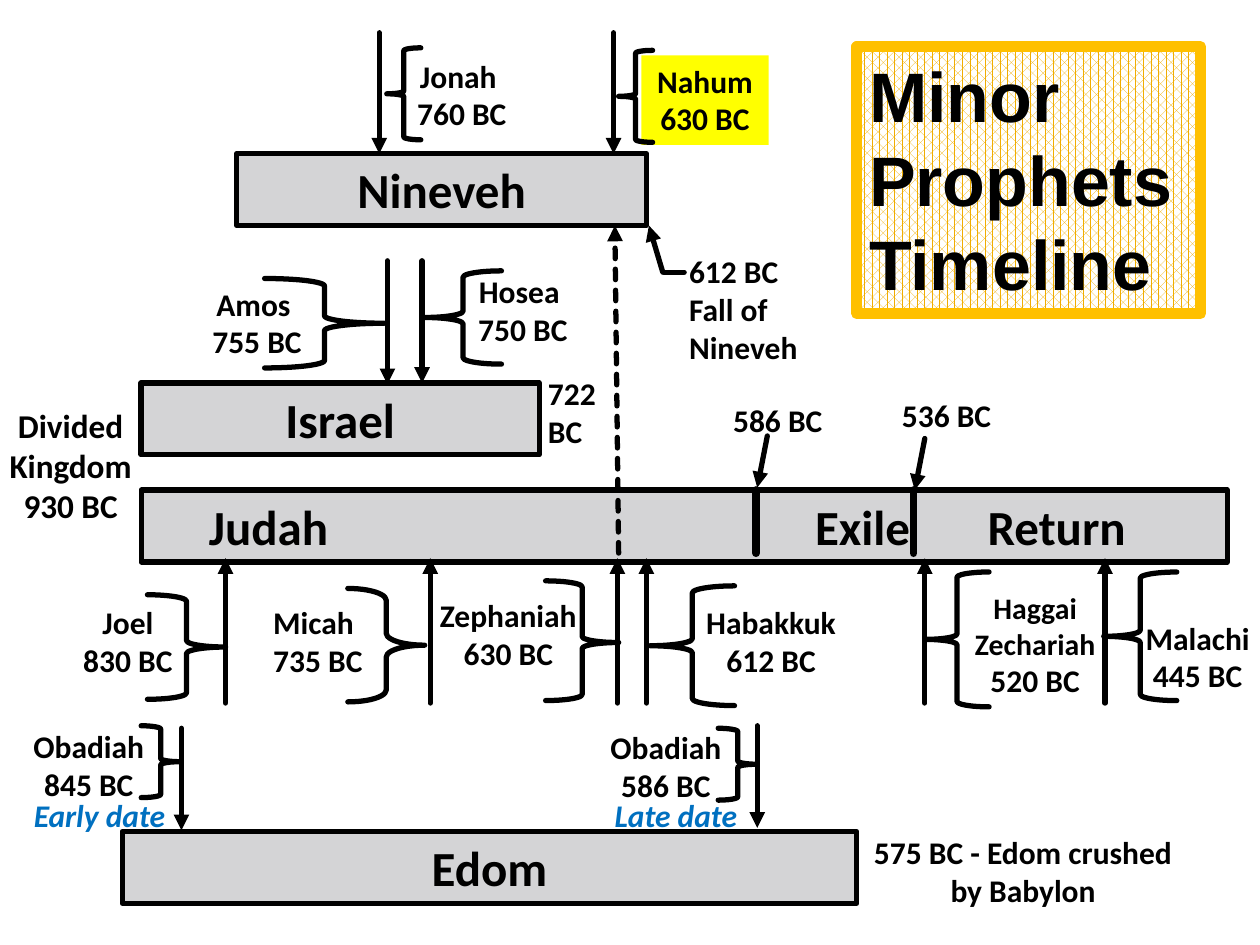
from pptx import Presentation
from pptx.dml.color import RGBColor
from pptx.enum.dml import MSO_LINE, MSO_PATTERN
from pptx.enum.shapes import MSO_CONNECTOR, MSO_SHAPE
from pptx.enum.text import MSO_ANCHOR, MSO_AUTO_SIZE, PP_ALIGN
from pptx.oxml.ns import qn
from pptx.util import Inches, Pt
from lxml.etree import SubElement

prs = Presentation()
prs.slide_width, prs.slide_height = Inches(10), Inches(7.5)
s = prs.slides.add_slide(prs.slide_layouts[6])
COL, ROW = prs.slide_width / 100, prs.slide_height / 75
BLACK, GREY, BLUE = "000000", "D4D4D6", "0070C0"
L, C = PP_ALIGN.LEFT, PP_ALIGN.CENTER
rgb = RGBColor.from_string


def add_box(x, y, w, h, text="", size=18, align=C, wrap=False, font="Calibri",
            color=BLACK, italic=False, fill=None, line=None, width=3,
            kind=MSO_SHAPE.RECTANGLE):
    """Place a shape on the column and row grid, one paragraph per text line."""
    sp = s.shapes.add_shape(kind, int(x * COL), int(y * ROW), int(w * COL), int(h * ROW))
    sp.shadow.inherit = False
    if fill:
        sp.fill.solid()
        sp.fill.fore_color.rgb = rgb(fill)
    else:
        sp.fill.background()
    if line:
        sp.line.color.rgb = rgb(line)
        sp.line.width = Pt(width)
    else:
        sp.line.fill.background()
    if text:
        tf = sp.text_frame
        tf.text = text
        tf.word_wrap = wrap
        tf.auto_size = MSO_AUTO_SIZE.SHAPE_TO_FIT_TEXT
        tf.vertical_anchor = MSO_ANCHOR.TOP
        look = {"name": font, "size": Pt(size), "bold": True, "italic": italic}
        for p in tf.paragraphs:
            p.alignment = align
            for r in p.runs:
                for key, value in look.items():
                    setattr(r.font, key, value)
                r.font.color.rgb = rgb(color)
    return sp


def add_line(x1, y1, x2, y2, width=3, arrow=True):
    cx = s.shapes.add_connector(MSO_CONNECTOR.STRAIGHT, int(x1 * COL), int(y1 * ROW),
                                int(x2 * COL), int(y2 * ROW))
    cx.line.color.rgb = rgb(BLACK)
    cx.line.width = Pt(width)
    ln = cx.line._get_or_add_ln()
    ln.set("cap", "rnd")
    if arrow:
        SubElement(ln, qn("a:tailEnd"), type="triangle")
    SubElement(cx._element.spPr, qn("a:effectLst"))
    return cx


# Kingdom bars
BAR = 5.7
for name, x, y, w in [("Nineveh", 18.8, 12.2, 32.5), ("Israel", 11.2, 30.4, 31.6),
                      ("Edom", 9.7, 66, 58.3)]:
    add_box(x, y, w, BAR, name, 28, wrap=True, fill=GREY, line=BLACK)

judah = add_box(11.2, 38.9, 86.2, BAR, "\tJudah\tExile\tReturn", 28, L, True,
                fill=GREY, line=BLACK)
tabs = SubElement(judah.text_frame.paragraphs[0]._p.get_or_add_pPr(), qn("a:tabLst"))
for stop in (4.4, 52.5, 66.2):
    SubElement(tabs, qn("a:tab"), pos=str(int(stop * COL)), algn="l")
for x in (60, 72.5):
    add_line(x, 38.9, x, 43.9, 4.5, arrow=False)

# Prophets and dates
for text, x, y, w, h, look in [
    ("Jonah \n760 BC", 31.9, 4, 9.5, 7.1, {}),
    ("Nahum\n630 BC", 50.9, 4.4, 10.1, 7.1, {"fill": "FFFF00"}),
    ("Amos \n755 BC", 15.8, 22.1, 9.2, 7.1, {}),
    ("Hosea \n750 BC", 36.8, 21.1, 9.4, 7.1, {}),
    ("Joel\n830 BC", 5.4, 47.4, 9.5, 7.1, {}),
    ("Micah\n735 BC", 20.7, 47.4, 9.3, 7.1, {"align": L}),
    ("Zephaniah\n630 BC", 33.5, 46.8, 13.7, 7.1, {"wrap": True}),
    ("Habakkuk\n612 BC", 53.6, 47.4, 15.2, 7.1, {"wrap": True}),
    ("Malachi\n445 BC", 89.8, 48.6, 10.5, 7.1, {"wrap": True}),
    ("Obadiah\n845 BC", 1.4, 57.2, 11.3, 7.1, {}),
    ("Obadiah\n586 BC", 47.2, 57.3, 11.3, 7.1, {}),
    ("Early date", 1.7, 62.7, 13, 4, {"align": L, "color": BLUE, "italic": True}),
    ("Late date", 47.8, 62.7, 12.3, 4, {"align": L, "color": BLUE, "italic": True}),
    ("Divided\nKingdom\n930 BC", -0.8, 31.7, 12.8, 10.6, {"size": 19, "wrap": True}),
    ("722\nBC", 42.5, 29.2, 6.2, 7.1, {"align": L}),
    ("586 BC", 57.2, 31.3, 9.6, 4, {"align": L}),
    ("536 BC", 70.6, 30.9, 9.4, 4, {"align": L}),
    ("612 BC\nFall of\nNineveh", 53.7, 19.5, 11.1, 10.1, {"align": L, "line": "FFFFFF"}),
    ("575 BC - Edom crushed by Babylon", 67.4, 65.6, 27.6, 7.1, {"wrap": True}),
]:
    add_box(x, y, w, h, text, **look)

haggai = add_box(75.7, 46.3, 12.9, 9.8, "Haggai\nZechariah\n520 BC", 17, wrap=True)
haggai.text_frame.paragraphs[-1].runs[0].font.size = Pt(18)

# Braces: a half turn points the tip to the right
for x, y, w, h, turn, adj in [
    (30.7, 3.8, 2.7, 7.3, 0, ()), (49.1, 4, 2.7, 7.3, 0, ()),
    (21, 22.1, 9.5, 7.1, 180, ()), (33.7, 21.5, 6.1, 7.4, 0, ()),
    (11.7, 47.2, 6.2, 8.3, 180, ()), (27.6, 46.7, 6.1, 9, 180, (0.154, 0.5)),
    (43.3, 46.1, 5.8, 9.5, 180, (0.083, 0.485)), (51.6, 46.5, 6.7, 9.5, 0, ()),
    (73.4, 45.4, 5.1, 10.7, 0, ()), (87.6, 45.4, 5.8, 10.2, 0, ()),
    (11.2, 57.6, 3.1, 5.7, 180, ()), (57, 57.8, 3.1, 5.7, 180, ()),
]:
    brace = add_box(x, y, w, h, line=BLACK, kind=MSO_SHAPE.LEFT_BRACE)
    brace.rotation = turn
    brace.line._get_or_add_ln().set("cap", "rnd")
    for i, value in enumerate(adj):
        brace.adjustments[i] = value

# Arrows to the bars
for x, top, tip in [(30.1, 2.6, 12.2), (48.7, 2.6, 12.2), (30.75, 20.7, 30.5),
                    (33.5, 20.7, 30.4), (14.4, 57.8, 65.9), (60.1, 57.6, 65.7)]:
    add_line(x, top, x, tip)
for x in (17.9, 34.15, 49, 51.3, 73.4, 87.7):
    add_line(x, 55.8, x, 44.3)
for x, y in [(60.9, 34.6), (73.4, 34.8)]:
    add_line(x, y, x - 0.8, y + 4.1)
add_line(52.6, 21.6, 51.5, 17.9)
add_line(52.7, 21.6, 54.3, 21.6, arrow=False)
add_line(49.1, 43.9, 48.8, 17.9).line.dash_style = MSO_LINE.SQUARE_DOT

# Title
title = add_box(68, 3.7, 27.3, 21.2, "Minor\nProphets\nTimeline", 40, L, font="Arial",
                line="FFC000", width=6)
title.fill.patterned()
title.fill.pattern = MSO_PATTERN.PERCENT_60
title.fill.fore_color.rgb = rgb("F0AD00")
title.fill.back_color.rgb = rgb("FFFFFF")

prs.save("out.pptx")
